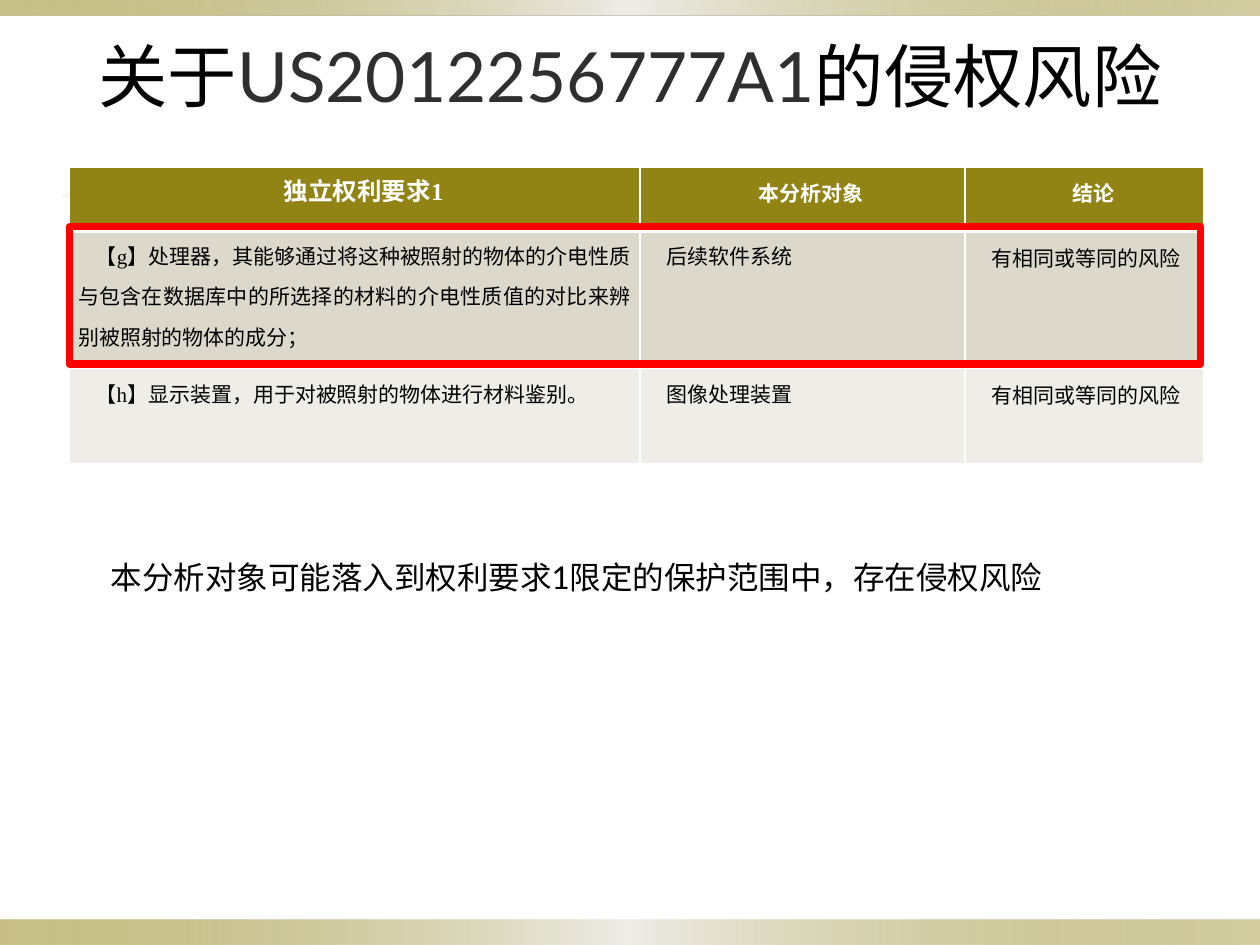
from lxml import etree
from pptx import Presentation
from pptx.dml.color import RGBColor
from pptx.enum.shapes import MSO_SHAPE as Shape
from pptx.enum.text import MSO_ANCHOR as Anchor, PP_ALIGN as Align
from pptx.oxml import parse_xml
from pptx.oxml.ns import nsdecls, qn
from pptx.util import Inches, Pt

COLORS = {
    "black": "000000", "white": "FFFFFF", "grey": "2F2F2F", "red": "FF0000",
    "olive": "918415", "sand": "DCD9CC", "pale": "EEEDE8",
}
SERIF, SANS = "Times New Roman", "Lato"

deck = Presentation()
deck.slide_width, deck.slide_height = Inches(10), Inches(7.5)
page = deck.slides.add_slide(deck.slide_layouts[6])


def area(left, top, width, height):
    """Turn percentages of the slide into left, top, width and height."""
    across, down = deck.slide_width / 100, deck.slide_height / 100
    return [int(left * across), int(top * down), int(width * across), int(height * down)]


def write(para, text, size=12, font=SERIF, color="black", bold=False,
          align=None, spacing=None, indent=None):
    span = para.add_run()
    span.text = text
    span.font.size, span.font.name, span.font.bold = Pt(size), font, bold
    span.font.color.rgb = RGBColor.from_string(COLORS[color])
    if align is not None:
        para.alignment = align
    if spacing is not None:
        para.line_spacing = Pt(spacing)
    if indent is not None:
        para._p.get_or_add_pPr().set("indent", str(Inches(indent)))


# Gradient bands: bottom edge, top edge, and a thin rule under the title
edge_stops = [("olive", 50), ("pale", 100), ("olive", 40)]
rule_stops = [("sand", 20), ("olive", 40), ("sand", 50)]
bands = [
    ((0, 97.33, 100, 2.67), edge_stops),
    ((0, 0, 100, 1.6), edge_stops),
    ((5, 20.53, 90, 0.27), rule_stops),
]
for place, stops in bands:
    band = page.shapes.add_shape(Shape.RECTANGLE, *area(*place))
    band.shadow.inherit = False
    band.line.fill.background()
    band.fill.gradient()
    band.fill.gradient_angle = 0
    stop_list = band._element.spPr.find(qn("a:gradFill")).find(qn("a:gsLst"))
    for old_stop in list(stop_list):
        stop_list.remove(old_stop)
    for number, (color, opacity) in enumerate(stops):
        stop_list.append(parse_xml(
            f'<a:gs {nsdecls("a")} pos="{number * 50000}"><a:srgbClr val="{COLORS[color]}">'
            f'<a:alpha val="{opacity * 1000}"/></a:srgbClr></a:gs>'))

# Title, whose closing line break lifts the words above the middle
title = page.shapes.add_textbox(*area(5, 4, 90, 16.67)).text_frame
title.word_wrap = True
title.vertical_anchor = Anchor.MIDDLE
para = title.paragraphs[0]
write(para, "关于", size=39.6, align=Align.CENTER)
write(para, "US2012256777A1", size=39.6, font=SANS, color="grey")
write(para, "的侵权风险", size=39.6)
para.add_line_break()
para.font.size = Pt(39.6)
etree.SubElement(para._p.findall(qn("a:br"))[-1], qn("a:rPr")).set("sz", "3960")

# Claim comparison table
rows = [
    ("独立权利要求1", "本分析对象", "结论"),
    ("【g】处理器，其能够通过将这种被照射的物体的介电性质与包含在数据库中的所选择的材料的"
     "介电性质值的对比来辨别被照射的物体的成分；", "后续软件系统", "有相同或等同的风险"),
    ("【h】显示装置，用于对被照射的物体进行材料鉴别。", "图像处理装置", "有相同或等同的风险"),
]
row_fills = ["olive", "sand", "pale"]
table = page.shapes.add_table(3, 3, *area(5.5, 17.73, 90, 31.2)).table
table.first_row = table.horz_banding = False
for column, width in zip(table.columns, [4.53, 2.58, 1.89]):
    column.width = Inches(width)
for row, height in zip(table.rows, [0.5, 1.09, 0.76]):
    row.height = Inches(height)

for r, texts in enumerate(rows):
    for c, text in enumerate(texts):
        cell = table.cell(r, c)
        cell.margin_left = cell.margin_right = Inches(0.07)
        cell.margin_top = cell.margin_bottom = 0
        header = r == 0
        write(cell.text_frame.paragraphs[0], text,
              size=14 if header and c == 0 else 12,
              color="white" if header else "black", bold=header,
              align=Align.CENTER if header else Align.JUSTIFY,
              spacing=24 if not header and c == 2 else 23, indent=0.14)
        props = cell._tc.get_or_add_tcPr()
        for side in "LRTB":
            thick = (header and side == "B") or (r == 1 and side == "T")
            props.append(parse_xml(
                f'<a:ln{side} {nsdecls("a")} w="{Pt(3 if thick else 1)}"><a:solidFill>'
                f'<a:srgbClr val="{COLORS["white"]}"/></a:solidFill></a:ln{side}>'))
        cell.fill.solid()
        cell.fill.fore_color.rgb = RGBColor.from_string(COLORS[row_fills[r]])

# Conclusion
conclusion = page.shapes.add_textbox(*area(7.8, 58.4, 85.2, 5.33)).text_frame
conclusion.word_wrap = True
write(conclusion.paragraphs[0], "本分析对象可能落入到权利要求1限定的保护范围中，存在侵权风险",
      size=18, font=SANS)

# Red frame around the claim at risk
frame = page.shapes.add_shape(Shape.RECTANGLE, *area(5.5, 24, 89.8, 14.53))
frame.shadow.inherit = False
frame.fill.background()
frame.line.color.rgb = RGBColor.from_string(COLORS["red"])
frame.line.width = Pt(4.25)

deck.save("out.pptx")
